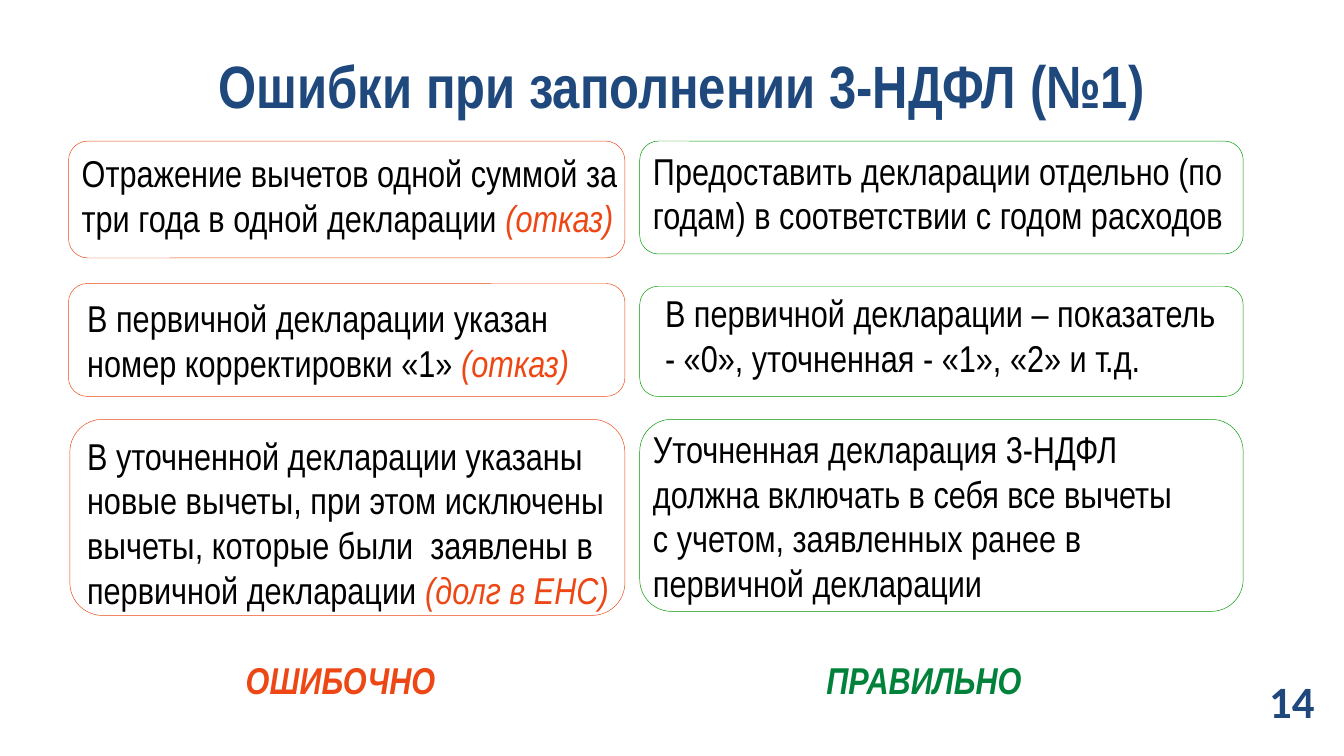
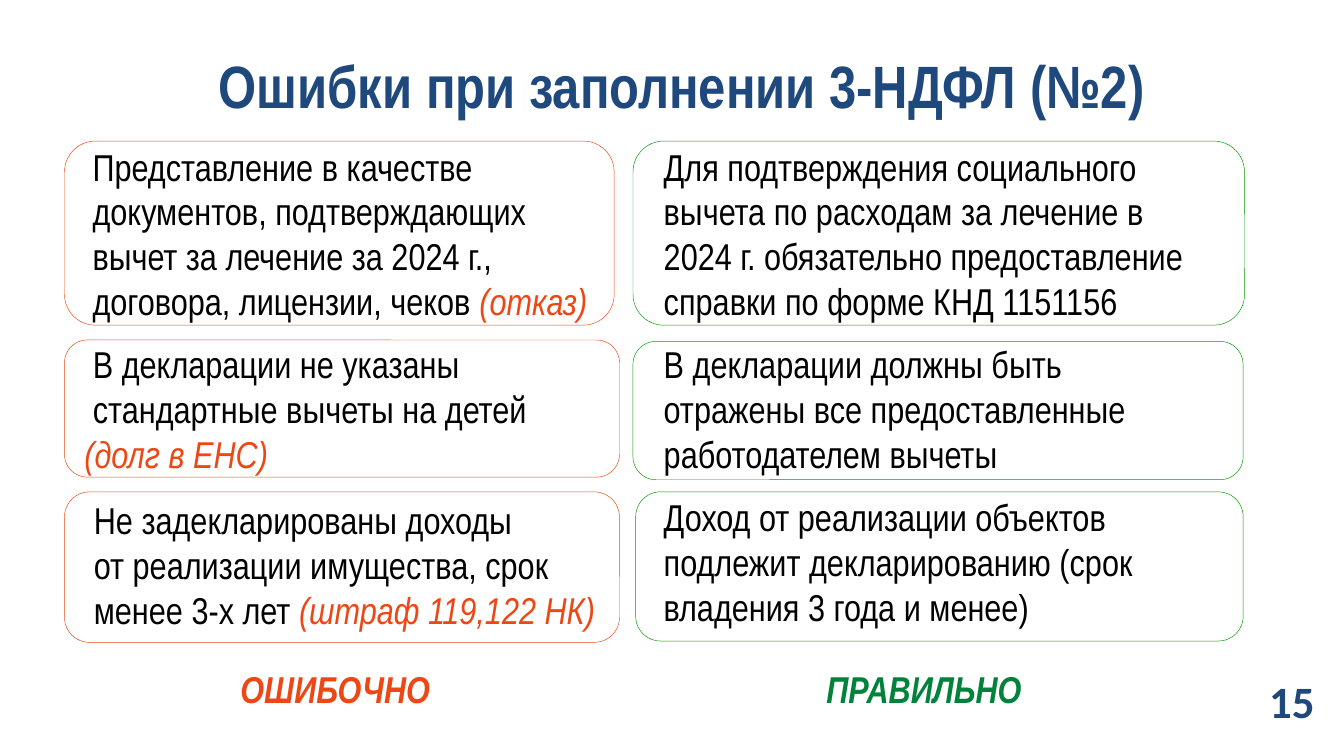
from pptx import Presentation
from pptx.dml.color import RGBColor
from pptx.enum import shapes, text
from pptx.util import Inches, Pt

NAVY = RGBColor(0x1F, 0x49, 0x7D)
ORANGE = RGBColor(0xEC, 0x47, 0x14)
GREEN_LINE = RGBColor(0x00, 0x99, 0x00)
GREEN = RGBColor(0x00, 0x82, 0x3B)
BLACK = RGBColor(0, 0, 0)
FONT = "Arial Narrow"
SLIDE_WIDTH = Inches(10)
SLIDE_HEIGHT = SLIDE_WIDTH * 9 // 16
TITLE_AREA = (0.51, 0.31, 9.13, 0.64)
NUMBER_AREA = (8.94, 4.94, 0.94, 0.55)

# Each card: frame area, text area (None puts the text in the frame), paragraphs.
# The part of a paragraph after "|" is the consequence, shown in orange italics.
PAGES = [
    {
        "title": "Ошибки при заполнении 3-НДФЛ (№1)",
        "number": "14",
        "caption_top": 4.84,
        "wrong_left": 1.73,
        "wrong": [
            ((0.51, 1.05, 4.14, 0.87), (0.51, 1.07, 4.34, 0.77),
             ["Отражение вычетов одной суммой за",
              "три года в одной декларации |(отказ)"]),
            ((0.51, 2.11, 4.14, 0.84), None,
             ["В первичной декларации указан номер корректировки «1» |(отказ)"]),
            ((0.52, 3.12, 4.13, 1.46), (0.55, 3.17, 4.4, 1.45),
             ["В уточненной декларации указаны новые вычеты, при этом исключены "
              "вычеты, которые были  заявлены в первичной декларации |(долг в ЕНС)"]),
        ],
        "right": [
            ((4.76, 1.05, 4.49, 0.84), (4.76, 1.05, 4.88, 0.77),
             ["Предоставить декларации отдельно (по годам) в соответствии "
              "с годом расходов"]),
            ((4.76, 2.13, 4.49, 0.82), (4.85, 2.11, 4.3, 0.77),
             ["В первичной декларации – показатель - «0», уточненная - «1», "
              "«2» и т.д."]),
            ((4.76, 3.12, 4.49, 1.43), (4.76, 3.12, 4.49, 1.45),
             ["Уточненная декларация 3-НДФЛ должна включать в себя все вычеты",
              "с учетом, заявленных ранее в первичной декларации"]),
        ],
    },
    {
        "title": "Ошибки при заполнении 3-НДФЛ (№2)",
        "number": "15",
        "caption_top": 4.91,
        "wrong_left": 1.69,
        "wrong": [
            ((0.48, 1.05, 4.09, 1.37), (0.59, 1.02, 4.02, 1.45),
             ["Представление в качестве",
              "документов, подтверждающих",
              "вычет за лечение за 2024 г., договора, лицензии, чеков |(отказ)"]),
            ((0.48, 2.53, 4.13, 1.02), None,
             [" В декларации не указаны",
              " стандартные вычеты на детей |(долг в ЕНС)"]),
            ((0.48, 3.66, 4.13, 1.12), (0.6, 3.65, 4.02, 1.11),
             ["Не задекларированы доходы",
              "от реализации имущества, срок менее 3-х лет |(штраф 119,122 НК)"]),
        ],
        "right": [
            ((4.71, 1.05, 4.55, 1.37), (4.84, 1.02, 4.41, 1.45),
             ["Для подтверждения социального вычета по расходам за лечение в",
              "2024 г. обязательно предоставление справки по форме КНД 1151156"]),
            ((4.71, 2.54, 4.54, 1.03), (4.84, 2.49, 4.19, 1.11),
             ["В декларации должны быть отражены все предоставленные "
              "работодателем вычеты"]),
            ((4.73, 3.66, 4.52, 1.11), (4.84, 3.63, 4.41, 1.11),
             ["Доход от реализации объектов подлежит декларированию (срок "
              "владения 3 года и менее)"]),
        ],
    },
]


def write(box, paragraphs, size=20, color=BLACK, font=FONT, bold=False, italic=False,
          align=text.PP_ALIGN.LEFT, anchor=text.MSO_ANCHOR.TOP):
    frame = box.text_frame
    frame.word_wrap = True
    frame.auto_size = text.MSO_AUTO_SIZE.NONE
    frame.vertical_anchor = anchor
    for index, line in enumerate(paragraphs):
        para = frame.add_paragraph() if index else frame.paragraphs[0]
        para.alignment = align
        plain, _, consequence = line.partition("|")
        for words, tint, slanted in ((plain, color, italic), (consequence, ORANGE, True)):
            if words:
                span = para.add_run()
                span.text = words
                span.font.name, span.font.size = font, Pt(size)
                span.font.bold, span.font.italic = bold, slanted
                span.font.color.rgb = tint


def add_text(page, area, paragraphs, **style):
    write(page.shapes.add_textbox(*map(Inches, area)), paragraphs, **style)


def add_card(page, frame_area, text_area, paragraphs, line_color):
    card = page.shapes.add_shape(shapes.MSO_SHAPE.ROUNDED_RECTANGLE,
                                 *map(Inches, frame_area))
    card.shadow.inherit = False
    card.fill.background()
    card.line.color.rgb = line_color
    card.line.width = Pt(0.25)
    if text_area:
        add_text(page, text_area, paragraphs)
    else:
        write(card, paragraphs, anchor=text.MSO_ANCHOR.MIDDLE)


def add_page(deck, content):
    page = deck.slides.add_slide(deck.slide_layouts.get_by_name("Title Only"))
    title = page.shapes.title
    title.left, title.top, title.width, title.height = map(Inches, TITLE_AREA)
    write(title, [content["title"]], size=32, color=NAVY, bold=True,
          align=text.PP_ALIGN.CENTER)
    for side, line_color in (("wrong", ORANGE), ("right", GREEN_LINE)):
        for card in content[side]:
            add_card(page, *card, line_color)
    top = content["caption_top"]
    for caption, left, width, color in (
            ("ОШИБОЧНО", content["wrong_left"], 1.69, ORANGE),
            ("ПРАВИЛЬНО", 6.05, 1.89, GREEN)):
        add_text(page, (left, top, width, 0.44), [caption], color=color,
                 bold=True, italic=True)
    add_text(page, NUMBER_AREA, [content["number"]], size=24, color=NAVY, font="Calibri",
             bold=True, align=text.PP_ALIGN.RIGHT, anchor=text.MSO_ANCHOR.MIDDLE)


def main():
    deck = Presentation()
    deck.slide_width, deck.slide_height = SLIDE_WIDTH, SLIDE_HEIGHT
    for content in PAGES:
        add_page(deck, content)
    deck.save("out.pptx")


if __name__ == "__main__":
    main()
